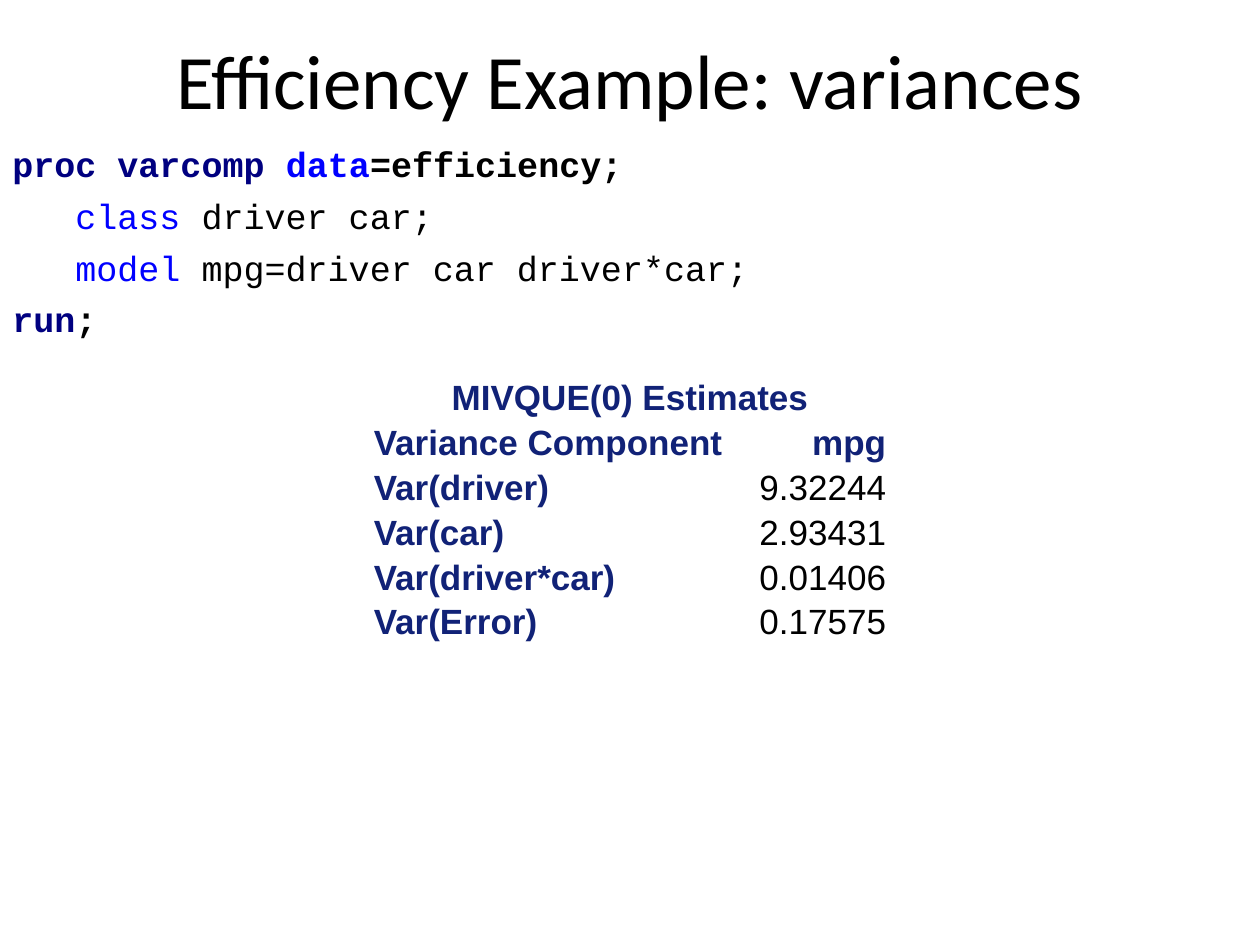
from dataclasses import dataclass

from lxml.etree import SubElement
from pptx import Presentation
from pptx.dml.color import RGBColor
from pptx.enum.text import MSO_ANCHOR, PP_ALIGN
from pptx.oxml.ns import qn
from pptx.util import Pt


@dataclass(frozen=True)
class Theme:
    black: str = "000000"
    navy: str = "000080"
    blue: str = "0000FF"
    heading: str = "112277"
    title_font: str = "Calibri"
    code_font: str = "Courier New"
    table_font: str = "Arial"
    title_size: float = 44
    text_size: float = 20


THEME = Theme()

CODE_LINES = [
    (0, True, [("proc varcomp ", THEME.navy), ("data", THEME.blue), ("=efficiency;", THEME.black)]),
    (36, False, [("class", THEME.blue), (" driver car;", THEME.black)]),
    (36, False, [("model", THEME.blue), (" mpg=driver car driver*car;", THEME.black)]),
    (0, True, [("run", THEME.navy), (";", THEME.black)]),
]
ESTIMATES = [
    ("Var(driver)", "9.32244"),
    ("Var(car)", "2.93431"),
    ("Var(driver*car)", "0.01406"),
    ("Var(Error)", "0.17575"),
]
COLUMN_WIDTHS = (210, 90)
ROW_HEIGHT = 25.7


def apply_format(target, values):
    for name, value in values.items():
        setattr(target, name, value)


def add_run(paragraph, text, font, size, color, bold=False):
    run = paragraph.add_run()
    run.text = text
    apply_format(run.font, {"name": font, "size": Pt(size), "bold": bold})
    run.font.color.rgb = RGBColor.from_string(color)


def add_text_frame(slide, left, top, width, height, anchor):
    shape = slide.shapes.add_textbox(Pt(left), Pt(top), Pt(width), Pt(height))
    apply_format(shape.text_frame, {"word_wrap": True, "vertical_anchor": anchor})
    return shape.text_frame


def add_title(slide, text):
    frame = add_text_frame(slide, 36, 0, 648, 90, MSO_ANCHOR.MIDDLE)
    paragraph = frame.paragraphs[0]
    paragraph.alignment = PP_ALIGN.CENTER
    add_run(paragraph, text, THEME.title_font, THEME.title_size, THEME.black)


def add_code(slide, lines):
    frame = add_text_frame(slide, 0, 78, 720, 126, MSO_ANCHOR.TOP)
    for index, (indent, bold, parts) in enumerate(lines):
        paragraph = frame.add_paragraph() if index else frame.paragraphs[0]
        paragraph.space_before = Pt(5.5)
        paragraph._p.get_or_add_pPr().set("marL", str(Pt(indent)))
        for text, color in parts:
            add_run(paragraph, text, THEME.code_font, THEME.text_size, color, bold)


def fill_cell(cell, text, alignment, color=THEME.heading, bold=True):
    apply_format(cell, {
        "vertical_anchor": MSO_ANCHOR.MIDDLE,
        "margin_left": Pt(3.6),
        "margin_right": Pt(3.6),
        "margin_top": 0,
        "margin_bottom": 0,
    })
    paragraph = cell.text_frame.paragraphs[0]
    paragraph.alignment = alignment
    add_run(paragraph, text, THEME.table_font, THEME.text_size, color, bold)


def clear_cell(cell):
    properties = cell._tc.get_or_add_tcPr()
    for side in ("a:lnL", "a:lnR", "a:lnT", "a:lnB"):
        SubElement(SubElement(properties, qn(side), w="0"), qn("a:noFill"))
    cell.fill.background()


def add_estimates(slide, title, header, estimates):
    row_count = len(estimates) + 2
    shape = slide.shapes.add_table(
        row_count, len(COLUMN_WIDTHS), Pt(210), Pt(214.6),
        Pt(sum(COLUMN_WIDTHS)), Pt(row_count * ROW_HEIGHT))
    table = shape.table
    apply_format(table, {"first_row": False, "horz_banding": False})
    for column, width in zip(table.columns, COLUMN_WIDTHS):
        column.width = Pt(width)
    for row in table.rows:
        row.height = Pt(ROW_HEIGHT)
    for cell in table.iter_cells():
        clear_cell(cell)
    table.cell(0, 0).merge(table.cell(0, 1))
    fill_cell(table.cell(0, 0), title, PP_ALIGN.CENTER)
    fill_cell(table.cell(1, 0), header[0], PP_ALIGN.LEFT)
    fill_cell(table.cell(1, 1), header[1], PP_ALIGN.RIGHT)
    for index, (component, value) in enumerate(estimates, start=2):
        fill_cell(table.cell(index, 0), component, PP_ALIGN.LEFT)
        fill_cell(table.cell(index, 1), value, PP_ALIGN.RIGHT, THEME.black, False)


def main():
    presentation = Presentation()
    apply_format(presentation, {"slide_width": Pt(720), "slide_height": Pt(540)})
    slide = presentation.slides.add_slide(presentation.slide_layouts[6])
    add_title(slide, "Efficiency Example: variances")
    add_code(slide, CODE_LINES)
    add_estimates(slide, "MIVQUE(0) Estimates", ("Variance Component", "mpg"), ESTIMATES)
    presentation.save("out.pptx")


if __name__ == "__main__":
    main()
